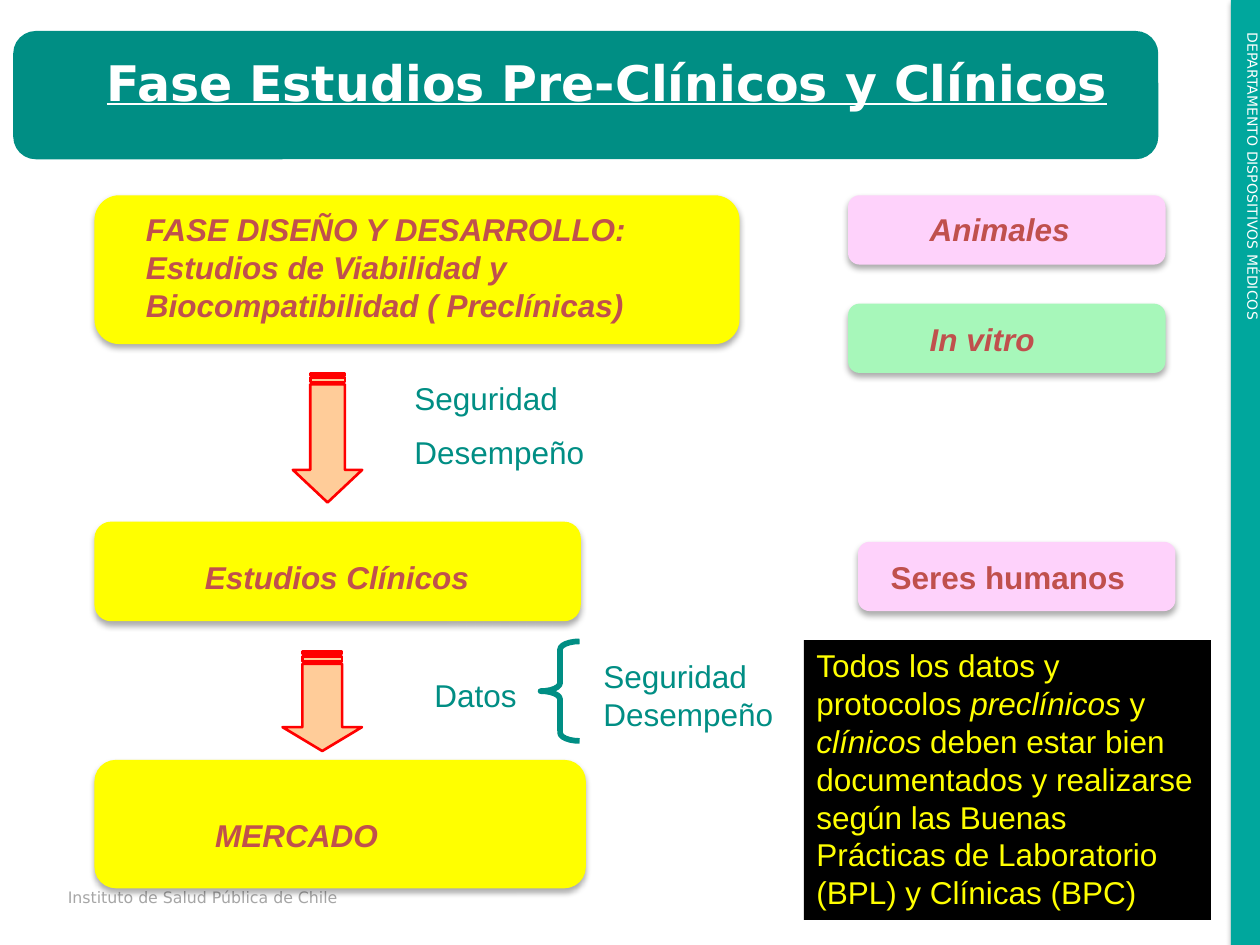
from dataclasses import dataclass
from typing import Optional

from lxml.etree import SubElement
from pptx import Presentation
from pptx.dml.color import RGBColor
from pptx.enum.shapes import MSO_SHAPE
from pptx.enum.text import MSO_ANCHOR, MSO_AUTO_SIZE, PP_ALIGN
from pptx.oxml.ns import qn
from pptx.util import Pt


@dataclass(frozen=True)
class Theme:
    teal: str = "008E84"
    bar: str = "00A79D"
    yellow: str = "FFFF00"
    pink: str = "FED2FB"
    mint: str = "A7F7BA"
    peach: str = "FFCC99"
    red: str = "FF0000"
    brick: str = "C0504D"
    grey: str = "A6A6A6"
    white: str = "FFFFFF"
    black: str = "000000"
    body_face: str = "Arial"
    brand_face: str = "DejaVu Sans"
    title_size: float = 28
    body_size: float = 18
    footer_size: float = 9
    side_size: float = 8


THEME = Theme()


@dataclass(frozen=True)
class Box:
    left: float
    top: float
    width: float
    height: float

    def lengths(self) -> tuple:
        return Pt(self.left), Pt(self.top), Pt(self.width), Pt(self.height)


@dataclass(frozen=True)
class Style:
    color: str
    size: float = THEME.body_size
    face: str = THEME.body_face
    bold: bool = False
    italic: bool = False
    underline: bool = False


@dataclass(frozen=True)
class Shadow:
    blur: float
    distance: float
    opacity: int


@dataclass(frozen=True)
class Label:
    box: Box
    lines: tuple
    style: Style
    align: PP_ALIGN = PP_ALIGN.LEFT
    gap: float = 0


@dataclass(frozen=True)
class Card:
    box: Box
    fill: str
    label: Label


@dataclass(frozen=True)
class Arrow:
    box: Box
    head: float


PHASE = Style(THEME.brick, bold=True, italic=True)
SUBJECT = Style(THEME.brick, bold=True)
RESULT = Style(THEME.teal)
TITLE = Style(THEME.white, THEME.title_size, THEME.brand_face, bold=True, underline=True)
FOOTER = Style(THEME.grey, THEME.footer_size, THEME.brand_face)
SIDE = Style(THEME.white, THEME.side_size, THEME.brand_face)
NOTE = Style(THEME.yellow)
CARD_SHADOW = Shadow(3.5, 2.2, 32)
BAR_SHADOW = Shadow(3.1, 1.8, 35)

CARDS = (
    Card(Box(54, 434.2, 280.8, 73.4), THEME.yellow,
         Label(Box(115.9, 463, 130.3, 28.8), ("MERCADO",), PHASE)),
    Card(Box(54, 298.1, 277.9, 56.9), THEME.yellow,
         Label(Box(76.3, 315.4, 232.6, 28.8), ("Estudios Clínicos",), PHASE, PP_ALIGN.CENTER)),
    Card(Box(54, 111.6, 368.6, 85), THEME.yellow,
         Label(Box(76.3, 116.6, 303.1, 72),
               ("FASE DISEÑO Y DESARROLLO: Estudios de Viabilidad y Biocompatibilidad ( Preclínicas)",), PHASE)),
    Card(Box(484.6, 111.6, 181.4, 39.6), THEME.pink,
         Label(Box(524.2, 116.6, 117.4, 28.8), ("Animales",), PHASE)),
    Card(Box(484.6, 173.5, 181.4, 39.6), THEME.mint,
         Label(Box(524.2, 179.3, 124.6, 28.8), ("In vitro",), PHASE)),
    Card(Box(490.3, 309.6, 181.4, 39.6), THEME.pink,
         Label(Box(501.8, 315.4, 152.6, 28.8), ("Seres humanos",), SUBJECT)),
)
ARROWS = (
    Arrow(Box(150.3, 230.5, 73.7, 39.6), 0.47),
    Arrow(Box(155.7, 378, 56.9, 45.4), 0.3),
)
RESULTS = (
    Label(Box(229.7, 213.1, 175.7, 61.2), ("Seguridad", "Desempeño"), RESULT, gap=9),
    Label(Box(337.7, 372.2, 158.4, 50.4), ("Seguridad", "Desempeño"), RESULT),
    Label(Box(241.2, 383, 90.7, 28.8), ("Datos",), RESULT),
)
NOTE_RUNS = (
    ("Todos los datos y protocolos ", False),
    ("preclínicos ", True),
    ("y ", False),
    ("clínicos ", True),
    ("deben estar bien documentados y realizarse según las Buenas Prácticas "
     "de Laboratorio (BPL) y Clínicas (BPC)", False),
)


def format_run(run, style: Style) -> None:
    font = run.font
    font.name, font.size = style.face, Pt(style.size)
    font.bold, font.italic, font.underline = style.bold, style.italic, style.underline
    font.color.rgb = RGBColor.from_string(style.color)


def write(frame, label: Label) -> None:
    frame.word_wrap = True
    frame.vertical_anchor = MSO_ANCHOR.TOP
    frame.text = "\n".join(label.lines)
    for position, paragraph in enumerate(frame.paragraphs):
        paragraph.alignment = label.align
        if position and label.gap:
            paragraph.space_before = Pt(label.gap)
        for run in paragraph.runs:
            format_run(run, label.style)


def add_label(slide, label: Label):
    text_box = slide.shapes.add_textbox(*label.box.lengths())
    write(text_box.text_frame, label)
    return text_box


def add_figure(slide, kind: MSO_SHAPE, box: Box, fill: Optional[str] = None,
               line: Optional[str] = None, weight: float = 1,
               shadow: Optional[Shadow] = None):
    figure = slide.shapes.add_shape(kind, *box.lengths())
    figure.shadow.inherit = False
    if fill:
        figure.fill.solid()
        figure.fill.fore_color.rgb = RGBColor.from_string(fill)
    else:
        figure.fill.background()
    if line:
        figure.line.color.rgb = RGBColor.from_string(line)
        figure.line.width = Pt(weight)
    else:
        figure.line.fill.background()
    if shadow:
        effects = figure.element.spPr.find(qn("a:effectLst"))
        outer = SubElement(effects, qn("a:outerShdw"), blurRad=str(Pt(shadow.blur)),
                           dist=str(Pt(shadow.distance)), dir="5400000", rotWithShape="0")
        tint = SubElement(outer, qn("a:srgbClr"), val=THEME.black)
        SubElement(tint, qn("a:alpha"), val=str(shadow.opacity * 1000))
    return figure


def add_card(slide, card: Card) -> None:
    add_figure(slide, MSO_SHAPE.ROUNDED_RECTANGLE, card.box, card.fill, shadow=CARD_SHADOW)
    add_label(slide, card.label)


def add_arrow(slide, arrow: Arrow) -> None:
    figure = add_figure(slide, MSO_SHAPE.STRIPED_RIGHT_ARROW, arrow.box,
                        THEME.peach, THEME.red, 1.5)
    figure.adjustments[0] = 0.5
    figure.adjustments[1] = arrow.head
    figure.rotation = 90


def add_frame(slide) -> None:
    add_label(slide, Label(Box(31.7, 504, 260.6, 36), ("Instituto de Salud Pública de Chile",), FOOTER))
    add_figure(slide, MSO_SHAPE.RECTANGLE, Box(703.4, 0, 16.6, 540), THEME.bar, shadow=BAR_SHADOW)
    department = add_label(slide, Label(Box(690.5, 11.5, 33.8, 285.1),
                                        ("DEPARTAMENTO DISPOSITIVOS MÉDICOS",), SIDE))
    department.text_frame._txBody.bodyPr.set("vert", "vert")


def add_title(slide) -> None:
    banner = add_figure(slide, MSO_SHAPE.ROUNDED_RECTANGLE, Box(8.6, 18.7, 652.3, 71.3),
                        THEME.teal, THEME.teal, 2)
    heading = Label(Box(34.6, 26.6, 624.2, 55.4), ("Fase Estudios Pre-Clínicos y Clínicos",),
                    TITLE, PP_ALIGN.CENTER)
    title = slide.shapes.title
    title.left, title.top, title.width, title.height = heading.box.lengths()
    write(title.text_frame, heading)
    title.text_frame.auto_size = MSO_AUTO_SIZE.NONE
    banner.element.addnext(title.element)


def add_note(slide) -> None:
    note = add_figure(slide, MSO_SHAPE.RECTANGLE, Box(459.4, 365.8, 232.6, 159.8), THEME.black)
    note.text_frame.word_wrap = True
    note.text_frame.vertical_anchor = MSO_ANCHOR.TOP
    paragraph = note.text_frame.paragraphs[0]
    paragraph.alignment = PP_ALIGN.LEFT
    for words, italic in NOTE_RUNS:
        run = paragraph.add_run()
        run.text = words
        format_run(run, NOTE)
        run.font.italic = italic


def main() -> None:
    deck = Presentation()
    deck.slide_width, deck.slide_height = Pt(720), Pt(540)
    slide = deck.slides.add_slide(deck.slide_layouts[5])
    add_frame(slide)
    add_title(slide)
    for card in CARDS:
        add_card(slide, card)
    for arrow in ARROWS:
        add_arrow(slide, arrow)
    for result in RESULTS:
        add_label(slide, result)
    brace = add_figure(slide, MSO_SHAPE.LEFT_BRACE, Box(308.9, 366.5, 22.3, 56.9),
                       line=THEME.teal, weight=3.25)
    brace.adjustments[0] = 0.21
    add_note(slide)
    deck.save("out.pptx")


if __name__ == "__main__":
    main()
